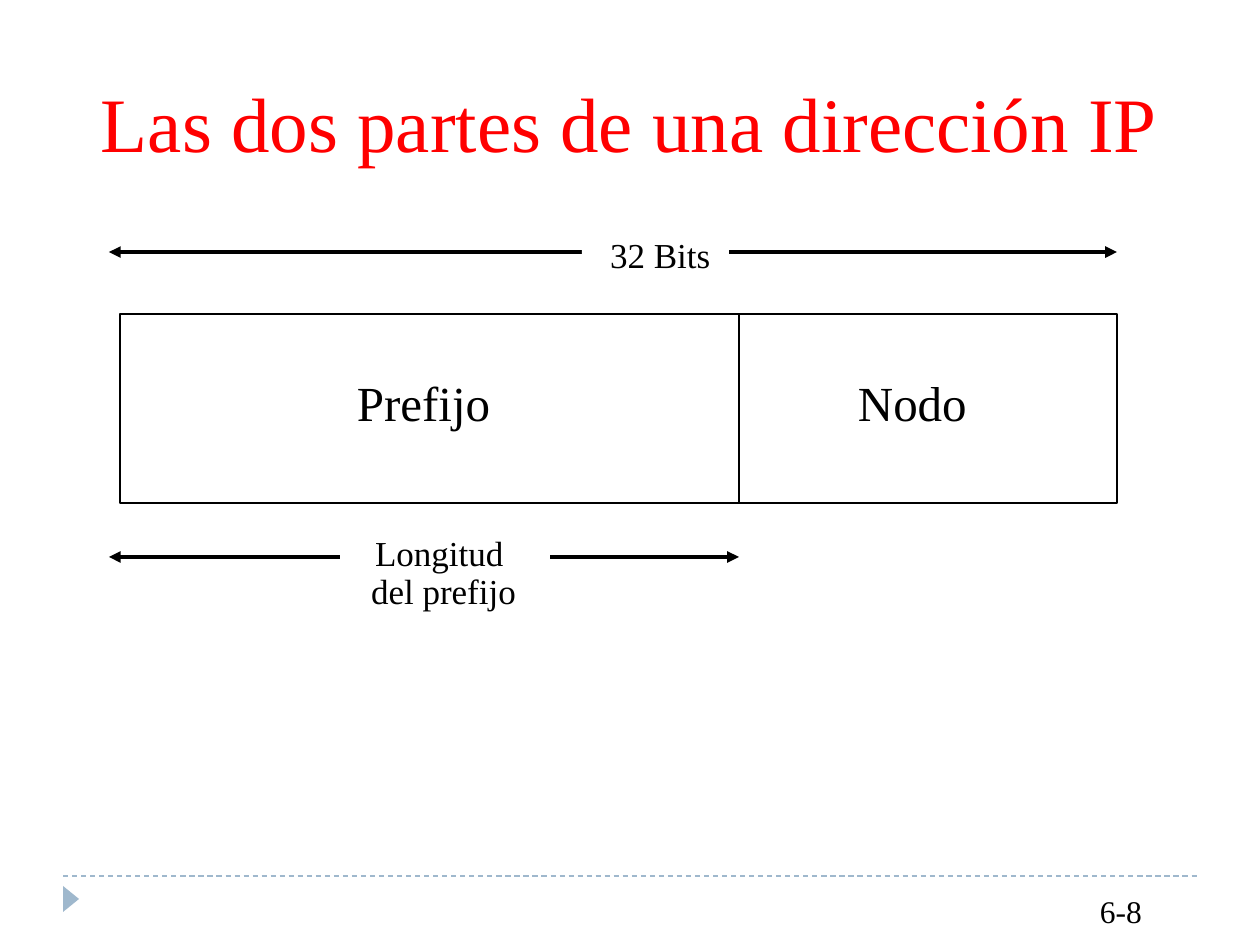
from lxml import etree
from pptx import Presentation
from pptx.dml.color import RGBColor
from pptx.enum.dml import MSO_LINE
from pptx.enum.shapes import MSO_CONNECTOR, MSO_SHAPE
from pptx.enum.text import MSO_ANCHOR, MSO_AUTO_SIZE, PP_ALIGN
from pptx.oxml.ns import qn
from pptx.util import Emu, Pt

STRAIGHT = MSO_CONNECTOR.STRAIGHT
RECTANGLE, TRIANGLE = MSO_SHAPE.RECTANGLE, MSO_SHAPE.ISOSCELES_TRIANGLE
DASH, TOP, LEFT, NO_FIT = MSO_LINE.DASH, MSO_ANCHOR.TOP, PP_ALIGN.LEFT, MSO_AUTO_SIZE.NONE
BLACK = RGBColor(0x00, 0x00, 0x00)
WHITE = RGBColor(0xFF, 0xFF, 0xFF)
RED = RGBColor(0xFF, 0x00, 0x00)
STEEL = RGBColor(0x9F, 0xB8, 0xCD)
FONT = "Times New Roman"


def px(n):
    return Emu(round(n * 914400 / 126))


class Deck:
    """Style and current slide, with a method for each kind of element."""

    def __init__(self):
        self.prs = Presentation()
        self.prs.slide_width, self.prs.slide_height = px(1260), px(945)
        self.s = self.prs.slides.add_slide(self.prs.slide_layouts[5])

    def fill_text(self, sp, lines, size, leading, color=BLACK):
        tf = sp.text_frame
        tf.word_wrap, tf.auto_size, tf.vertical_anchor = True, NO_FIT, TOP
        tf.margin_left = tf.margin_right = tf.margin_top = tf.margin_bottom = 0
        for i, (text, indent) in enumerate(lines):
            p = tf.add_paragraph() if i else tf.paragraphs[0]
            p.alignment, p.line_spacing = LEFT, Pt(leading)
            p.space_before = p.space_after = Pt(0)
            p._p.get_or_add_pPr().set("marL", str(px(indent)))
            r = p.add_run()
            r.text = text
            r.font.name, r.font.size, r.font.color.rgb = FONT, Pt(size), color

    def title(self, x, y, w, h, text):
        sp = self.s.shapes.title
        sp.left, sp.top, sp.width, sp.height = px(x), px(y), px(w), px(h)
        self.fill_text(sp, [(text, 0)], 44, 46, RED)

    def text(self, x, y, w, h, lines, size, leading):
        sp = self.s.shapes.add_textbox(px(x), px(y), px(w), px(h))
        self.fill_text(sp, lines, size, leading)

    def shape(self, kind, x, y, w, h, fill=None, line=None, rotation=0):
        sp = self.s.shapes.add_shape(kind, px(x), px(y), px(w), px(h))
        sp.shadow.inherit = False
        sp.rotation = rotation
        if fill is None:
            sp.fill.background()
        else:
            sp.fill.solid()
            sp.fill.fore_color.rgb = fill
        if line is None:
            sp.line.fill.background()
        else:
            sp.line.color.rgb, sp.line.width = line, Pt(0.75)

    def line(self, x1, y1, x2, y2, color=BLACK, width=0.75, dash=None):
        sp = self.s.shapes.add_connector(STRAIGHT, px(x1), px(y1), px(x2), px(y2))
        sp.line.color.rgb, sp.line.width = color, Pt(width)
        if dash is not None:
            sp.line.dash_style = dash
        etree.SubElement(sp._element.spPr, qn("a:effectLst"))
        return sp

    def span(self, x1, x2, y, gap):
        sp = self.line(x1, y, x2, y, width=2.25)
        ln = sp._element.spPr.find(qn("a:ln"))
        for end in ("a:headEnd", "a:tailEnd"):
            etree.SubElement(ln, qn(end), type="triangle")
        self.shape(RECTANGLE, *gap, fill=WHITE)


def main():
    left, split, right, top, bottom = 120, 739, 1117, 314, 503
    deck = Deck()
    deck.line(63, 876, 1197, 876, STEEL, dash=DASH)
    deck.shape(TRIANGLE, 58, 891, 26, 16, fill=STEEL, rotation=90)
    deck.title(101, 87, 1080, 81, "Las dos partes de una dirección IP")

    deck.span(109, right, 252, (582, 199, 147, 95))
    deck.text(610, 238, 110, 39, [("32 Bits", 0)], 20, 21.4)

    deck.shape(RECTANGLE, left, top, right - left, bottom - top, line=BLACK)
    deck.line(split, top, split, bottom)
    for x, name in ((357, "Prefijo"), (858, "Nodo")):
        deck.text(x, 377, 150, 56, [(name, 0)], 28, 31)

    deck.span(109, split, 557, (340, 514, 210, 105))
    deck.text(370, 535, 160, 80, [("Longitud", 5), ("del prefijo", 1)], 20, 22)

    deck.text(1100, 896, 50, 35, [("6-8", 0)], 18, 19.4)
    deck.prs.save("out.pptx")


if __name__ == "__main__":
    main()
